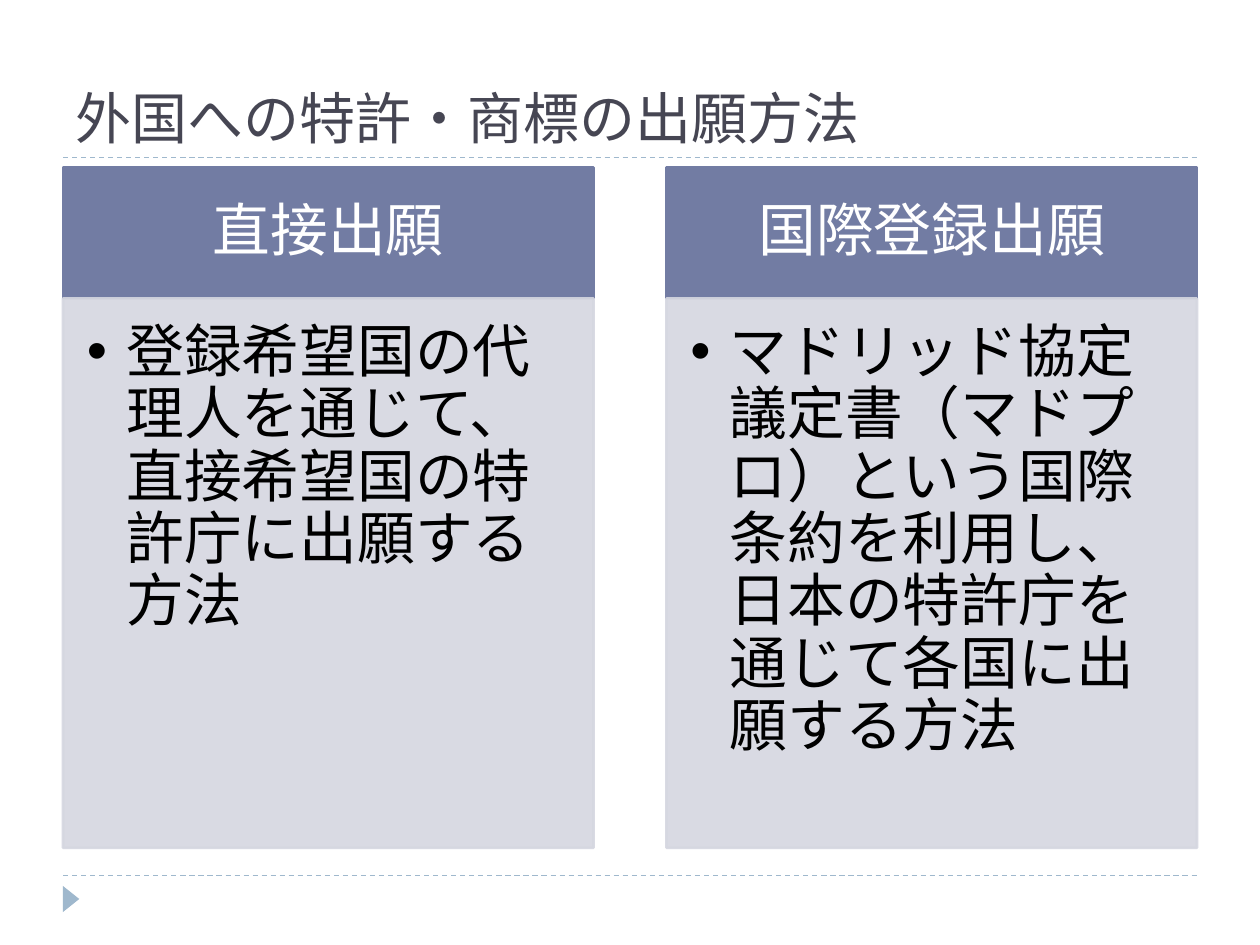
from lxml import etree
from pptx import Presentation
from pptx.dml.color import RGBColor
from pptx.enum.dml import MSO_LINE
from pptx.enum.shapes import MSO_CONNECTOR, MSO_SHAPE
from pptx.enum.text import MSO_ANCHOR, MSO_AUTO_SIZE, PP_ALIGN
from pptx.oxml.ns import qn
from pptx.util import Pt

LEFT, CENTER = PP_ALIGN.LEFT, PP_ALIGN.CENTER
TOP, MIDDLE, BOTTOM = MSO_ANCHOR.TOP, MSO_ANCHOR.MIDDLE, MSO_ANCHOR.BOTTOM

TITLE = "外国への特許・商標の出願方法"
METHODS = [
    ("直接出願", "登録希望国の代理人を通じて、直接希望国の特許庁に出願する方法"),
    ("国際登録出願", "マドリッド協定議定書（マドプロ）という国際条約を利用し、"
     "日本の特許庁を通じて各国に出願する方法"),
]

THEME = {
    "title_font": "TeX Gyre Bonum", "body_font": "Cabin",
    "title_size": 32, "body_size": 33,
    "title": "464653", "header": "727CA3", "panel": "D5D7E0",
    "rule": "9FB8CD", "light": "FFFFFF", "dark": "000000",
}

WIDTH, HEIGHT, MARGIN = 720, 540, 36
CONTENT_W = WIDTH - 2 * MARGIN
COLUMN_W = 303.2
COLUMN_STEP = CONTENT_W - COLUMN_W
HEADER_TOP, HEADER_H, PANEL_H = 95.8, 74.8, 313.9
RULES_Y = (90, 500.4)
HANGING = 22.5
COLUMN_LAYOUT = 4


def rgb(name):
    return RGBColor.from_string(THEME[name])


def place(sp, x, y, w, h):
    sp.left, sp.top, sp.width, sp.height = Pt(x), Pt(y), Pt(w), Pt(h)


def write(sp, text, *, font, size, color, align=LEFT, anchor=TOP,
          insets=(7.2, 3.6, 7.2, 3.6), spacing=1.0, bullet=False):
    tf = sp.text_frame
    tf.word_wrap = True
    tf.auto_size = MSO_AUTO_SIZE.NONE
    tf.vertical_anchor = anchor
    tf.margin_left, tf.margin_top, tf.margin_right, tf.margin_bottom = map(Pt, insets)
    p = tf.paragraphs[0]
    p.alignment = align
    p.line_spacing = spacing
    p.space_before = Pt(0)
    pPr = p._p.get_or_add_pPr()
    indent = HANGING if bullet else 0
    pPr.set("marL", str(Pt(indent)))
    pPr.set("indent", str(-Pt(indent)))
    if bullet:
        etree.SubElement(pPr, qn("a:buChar")).set("char", "•")
    else:
        etree.SubElement(pPr, qn("a:buNone"))
    r = p.add_run()
    r.text = text
    r.font.name = THEME[font]
    r.font.size = Pt(THEME[size])
    r.font.bold = False
    r.font.color.rgb = rgb(color)


def paint(sp, color, opacity=100):
    sp.fill.solid()
    sp.fill.fore_color.rgb = rgb(color)
    sp.line.color.rgb = rgb(color)
    sp.line.width = Pt(1.5)
    if opacity < 100:
        for clr in sp._element.spPr.iter(qn("a:srgbClr")):
            etree.SubElement(clr, qn("a:alpha")).set("val", str(opacity * 1000))


def add_rule(s, y):
    line = s.shapes.add_connector(MSO_CONNECTOR.STRAIGHT, Pt(MARGIN), Pt(y),
                                  Pt(WIDTH - MARGIN), Pt(y))
    line.line.color.rgb = rgb("rule")
    line.line.width = Pt(0.75)
    line.line.dash_style = MSO_LINE.DASH
    etree.SubElement(line._element.spPr, qn("a:effectLst"))


def add_marker(s):
    sp = s.shapes.add_shape(MSO_SHAPE.ISOSCELES_TRIANGLE, Pt(33.1), Pt(509), Pt(15), Pt(9.4))
    sp.rotation = 90
    sp.shadow.inherit = False
    sp.fill.solid()
    sp.fill.fore_color.rgb = rgb("rule")
    sp.line.fill.background()


def fill_column(header, panel, x, heading, detail):
    place(header, x, HEADER_TOP, COLUMN_W, HEADER_H)
    paint(header, "header")
    write(header, heading, font="body_font", size="body_size", color="light",
          align=CENTER, anchor=MIDDLE, insets=(18.7, 10.8, 18.7, 10.8), spacing=0.9)
    place(panel, x, HEADER_TOP + HEADER_H, COLUMN_W, PANEL_H)
    paint(panel, "panel", opacity=90)
    write(panel, detail, font="body_font", size="body_size", color="dark",
          insets=(13.7, 13.7, 18.7, 20.9), spacing=0.9, bullet=True)


def main():
    prs = Presentation()
    prs.slide_width, prs.slide_height = Pt(WIDTH), Pt(HEIGHT)
    s = prs.slides.add_slide(prs.slide_layouts[COLUMN_LAYOUT])
    for y in RULES_Y:
        add_rule(s, y)
    add_marker(s)
    title, *bodies = s.placeholders
    place(title, MARGIN, 12.2, CONTENT_W, 77.8)
    write(title, TITLE, font="title_font", size="title_size", color="title", anchor=BOTTOM)
    for i, (heading, detail) in enumerate(METHODS):
        header, panel = bodies[2 * i:2 * i + 2]
        fill_column(header, panel, MARGIN + i * COLUMN_STEP, heading, detail)
    prs.save("out.pptx")


if __name__ == "__main__":
    main()
